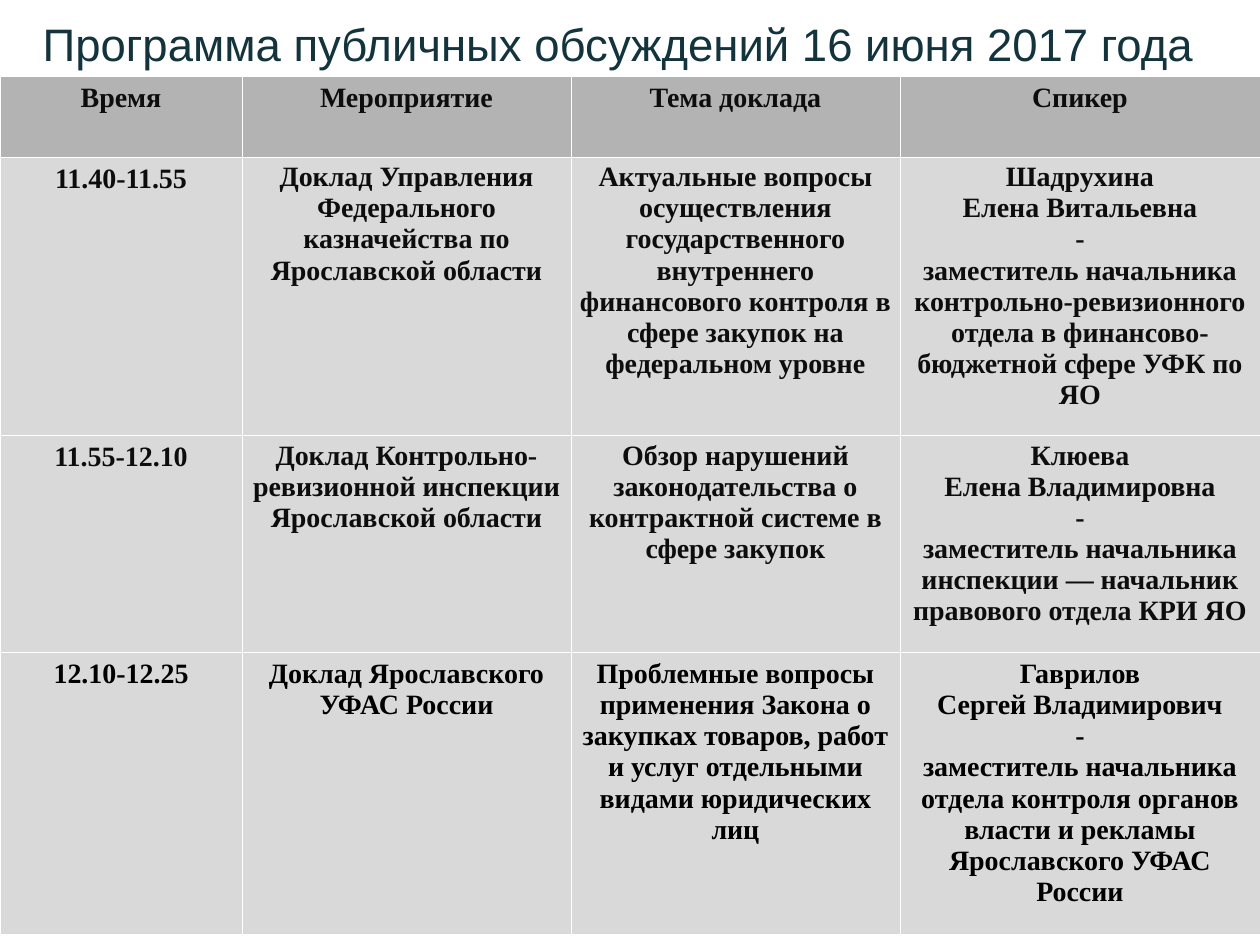
from dataclasses import dataclass

from lxml import etree
from pptx import Presentation
from pptx.dml.color import RGBColor
from pptx.enum.text import PP_ALIGN
from pptx.oxml.ns import qn
from pptx.util import Cm, Pt

CENTER = PP_ALIGN.CENTER


@dataclass(frozen=True)
class Theme:
    title_font: str = "Arial"
    table_font: str = "Times New Roman"
    title_size: float = 26
    table_size: float = 16
    border_width: float = 0.06
    title: str = "13343D"
    text: str = "0D0D0D"
    last_row_text: str = "000000"
    header_fill: str = "B3B3B3"
    body_fill: str = "D9D9D9"
    border: str = "FFFFFF"


THEME = Theme()
TITLE = "Программа публичных обсуждений 16 июня 2017 года"
COLUMN_WIDTHS = (4.88, 6.63, 6.63, 7.26)
ROW_HEIGHTS = (1.63, 3.68, 4.37, 4.98)
PROGRAMME = (
    ("Время", "Мероприятие", "Тема доклада", "Спикер"),
    (
        "11.40-11.55",
        "Доклад Управления Федерального казначейства по Ярославской области",
        "Актуальные вопросы осуществления государственного внутреннего "
        "финансового контроля в сфере закупок на федеральном уровне",
        "Шадрухина\nЕлена Витальевна\n-\nзаместитель начальника "
        "контрольно-ревизионного отдела в финансово-бюджетной сфере УФК по ЯО",
    ),
    (
        "11.55-12.10",
        "Доклад Контрольно-ревизионной инспекции Ярославской области",
        "Обзор нарушений законодательства о контрактной системе в сфере закупок",
        "Клюева\nЕлена Владимировна\n-\nзаместитель начальника инспекции — "
        "начальник правового отдела КРИ ЯО",
    ),
    (
        "12.10-12.25",
        "Доклад Ярославского УФАС России",
        "Проблемные вопросы применения Закона о закупках товаров, работ и услуг "
        "отдельными видами юридических лиц",
        "Гаврилов\nСергей Владимирович\n-\nзаместитель начальника отдела контроля "
        "органов власти и рекламы Ярославского УФАС России",
    ),
)


def style_text(frame, font_name, size, color, bold=False, align=None):
    for para in frame.paragraphs:
        para.alignment = align
        for span in para.runs:
            span.font.name = font_name
            span.font.size = Pt(size)
            span.font.bold = bold
            span.font.color.rgb = RGBColor.from_string(color)


def add_title(page):
    box = page.shapes.add_textbox(Cm(0.61), Cm(0.2), Cm(24.59), Cm(2))
    frame = box.text_frame
    frame.word_wrap = True
    frame.text = TITLE
    style_text(frame, THEME.title_font, THEME.title_size, THEME.title)


def set_borders(cell):
    """Put the border lines ahead of the fill, as the cell schema requires."""
    properties = cell._tc.get_or_add_tcPr()
    for index, side in enumerate(("a:lnL", "a:lnR", "a:lnT", "a:lnB")):
        line = etree.Element(qn(side), w=str(Pt(THEME.border_width)))
        fill = etree.SubElement(line, qn("a:solidFill"))
        etree.SubElement(fill, qn("a:srgbClr"), val=THEME.border)
        properties.insert(index, line)


def set_margins(cell, row, column):
    """Header and first time cell are roomy; the other cells are tight."""
    roomy = row == 0 or (row, column) == (1, 0)
    tall = roomy or column == 0 or row == len(PROGRAMME) - 1
    cell.margin_left = cell.margin_right = Cm(0.25 if roomy else 0.1)
    cell.margin_top = cell.margin_bottom = Cm(0.13 if tall else 0.1)


def fill_cell(cell, text, row, column):
    last_row = row == len(PROGRAMME) - 1
    cell.text_frame.text = text
    style_text(
        cell.text_frame,
        THEME.table_font,
        THEME.table_size,
        THEME.last_row_text if last_row else THEME.text,
        bold=True,
        align=CENTER,
    )
    set_margins(cell, row, column)
    cell.fill.solid()
    color = THEME.header_fill if row == 0 else THEME.body_fill
    cell.fill.fore_color.rgb = RGBColor.from_string(color)
    set_borders(cell)


def add_programme(page):
    table = page.shapes.add_table(
        len(ROW_HEIGHTS), len(COLUMN_WIDTHS),
        Cm(0), Cm(1.53), Cm(sum(COLUMN_WIDTHS)), Cm(sum(ROW_HEIGHTS)),
    ).table
    for column, width in zip(table.columns, COLUMN_WIDTHS):
        column.width = Cm(width)
    for row, height in zip(table.rows, ROW_HEIGHTS):
        row.height = Cm(height)
    for row, texts in enumerate(PROGRAMME):
        for column, text in enumerate(texts):
            fill_cell(table.cell(row, column), text, row, column)


def main():
    deck = Presentation()
    deck.slide_width, deck.slide_height = Cm(25.4), Cm(19.05)
    page = deck.slides.add_slide(deck.slide_layouts[6])
    add_title(page)
    add_programme(page)
    deck.save("out.pptx")


if __name__ == "__main__":
    main()
